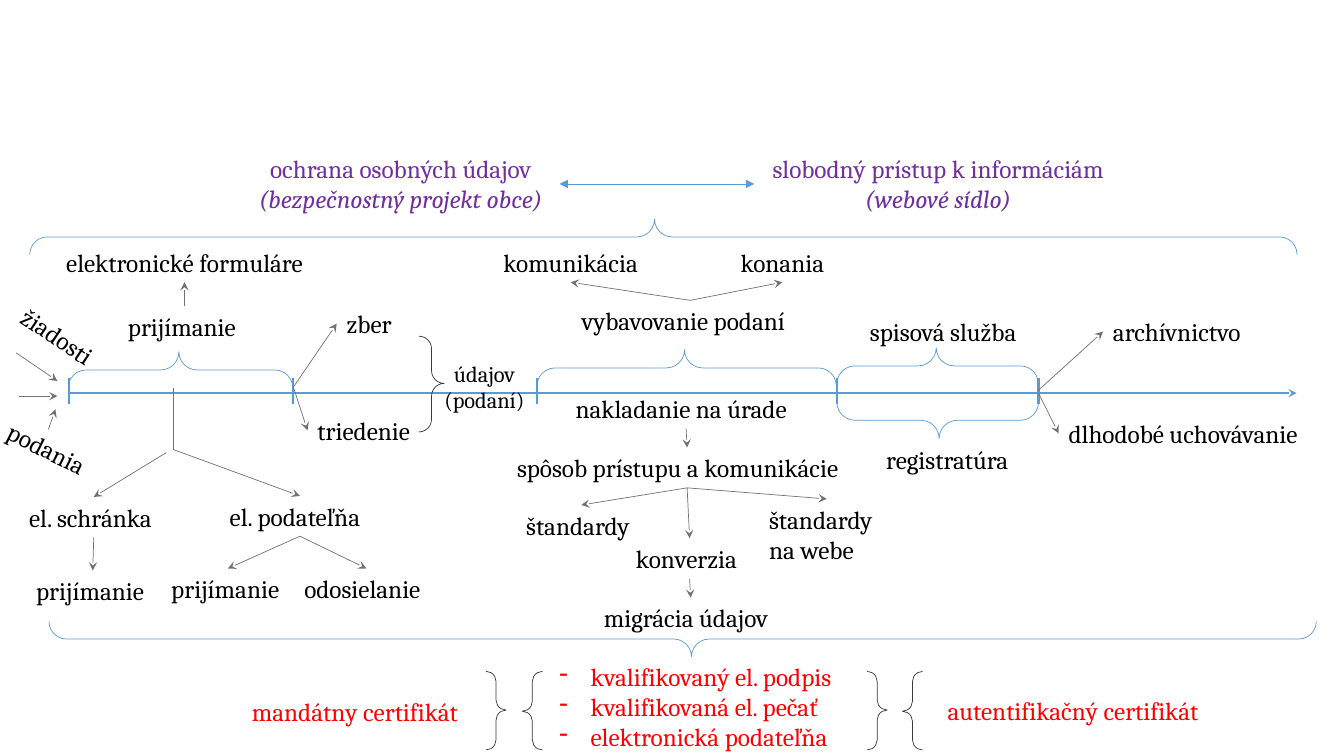
from dataclasses import dataclass
from typing import Optional, Union

from pptx import Presentation
from pptx.dml.color import RGBColor
from pptx.enum.shapes import MSO_CONNECTOR, MSO_SHAPE
from pptx.enum.text import MSO_AUTO_SIZE, PP_ALIGN
from pptx.oxml.ns import qn
from pptx.util import Inches, Pt
from lxml.etree import SubElement


@dataclass(frozen=True)
class Theme:
    font: str = "Cambria"
    body: int = 18
    small: int = 16
    thin: float = 0.5
    thick: float = 1.5
    black: str = "000000"
    red: str = "FF0000"
    purple: str = "7030A0"
    blue: str = "5B9BD5"
    grey: str = "767171"
    dark: str = "3B3838"


THEME = Theme()
TOP, LEFT, BOTTOM, RIGHT = range(4)
POINT_RIGHT, POINT_DOWN, POINT_LEFT, POINT_UP = 0, 90, 180, 270


@dataclass(frozen=True)
class Label:
    key: str
    text: str
    left: float
    top: float
    width: float
    height: float = 0.4
    color: str = THEME.black
    size: int = THEME.body
    center: bool = False
    wrap: bool = False
    turn: float = 0
    slant: bool = False
    bullet: bool = False


@dataclass(frozen=True)
class Brace:
    mid_x: float
    mid_y: float
    depth: float
    span: float
    turn: int
    color: str = THEME.blue


@dataclass(frozen=True)
class Point:
    x: float
    y: float


@dataclass(frozen=True)
class Side:
    key: str
    site: int


@dataclass(frozen=True)
class Line:
    start: Union[Point, Side]
    end: Union[Point, Side]
    color: str = THEME.grey
    width: float = THEME.thin
    head: Optional[str] = None
    tail: Optional[str] = "stealth"


LABELS = [
    Label("tools", "kvalifikovaný el. podpis\nkvalifikovaná el. pečať\nelektronická podateľňa",
          5.45, 6.51, 3.04, 1.01, THEME.red, bullet=True),
    Label("authcert", "autentifikačný certifikát", 9.3, 6.85, 2.78, color=THEME.red),
    Label("mandate", "mandátny certifikát", 2.4, 6.86, 2.33, color=THEME.red),
    Label("privacy", "ochrana osobných údajov\n(bezpečnostný projekt obce)",
          2.4, 1.47, 3.15, 0.71, THEME.purple, center=True, slant=True),
    Label("access", "slobodný prístup k informáciám\n(webové sídlo)",
          7.48, 1.47, 3.65, 0.71, THEME.purple, center=True, slant=True),
    Label("requests", "žiadosti", 0.07, 3.15, 1.05, turn=33.8),
    Label("filings", "podania", -0.05, 4.26, 1.07, turn=26.4),
    Label("intake", "prijímanie", 1.17, 3.04, 1.32),
    Label("mailbox", "el. schránka", 0.19, 4.93, 1.48),
    Label("office", "el. podateľňa", 2.18, 4.92, 1.59),
    Label("forms", "elektronické formuláre", 0.5, 2.4, 2.66, center=True, wrap=True),
    Label("process", "vybavovanie podaní", 5.67, 2.98, 2.35),
    Label("records", "spisová služba", 8.48, 3.09, 1.75, center=True),
    Label("archive", "archívnictvo", 10.94, 3.09, 1.53),
    Label("storage", "dlhodobé uchovávanie", 10.5, 4.1, 2.61),
    Label("registry", "registratúra", 8.65, 4.36, 1.49, center=True),
    Label("handling", "nakladanie na úrade", 5.61, 3.85, 2.39),
    Label("method", "spôsob prístupu a komunikácie", 5.03, 4.44, 3.57),
    Label("standards", "štandardy", 5.12, 5.01, 1.29),
    Label("web", "štandardy\nna webe", 7.53, 4.95, 1.34, 0.71),
    Label("convert", "konverzia", 6.21, 5.34, 1.26),
    Label("migrate", "migrácia údajov", 5.89, 5.93, 1.92),
    Label("collect", "zber", 3.34, 3.01, 0.68),
    Label("sort", "triedenie", 3.05, 4.07, 1.18),
    Label("data", "údajov\n(podaní)", 4.23, 3.52, 1.15, 0.64,
          size=THEME.small, center=True, wrap=True),
    Label("actions", "konania", 7.03, 2.4, 1.46, center=True, wrap=True),
    Label("contact", "komunikácia", 4.74, 2.4, 1.84, center=True, wrap=True),
    Label("boxin", "prijímanie", 0.26, 5.66, 1.32),
    Label("deskin", "prijímanie", 1.6, 5.64, 1.32),
    Label("deskout", "odosielanie", 2.92, 5.64, 1.43),
]

BRACES = [
    Brace(6.77, 6.34, 0.35, 12.57, POINT_DOWN),
    Brace(6.58, 2.35, 0.35, 12.57, POINT_UP),
    Brace(1.79, 3.67, 0.36, 2.23, POINT_UP),
    Brace(6.81, 3.65, 0.36, 2.97, POINT_UP),
    Brace(9.3, 3.63, 0.36, 2, POINT_UP),
    Brace(9.3, 4.17, 0.36, 2, POINT_DOWN),
    Brace(4.28, 3.81, 0.25, 0.95, POINT_RIGHT, THEME.dark),
] + [
    Brace(x, 7.05, 0.2, 0.78, turn, THEME.dark)
    for x, turn in ((4.92, POINT_RIGHT), (5.28, POINT_LEFT),
                    (8.7, POINT_RIGHT), (9.05, POINT_LEFT))
]

AXIS = Line(Point(0.67, 3.9), Point(12.86, 3.9), THEME.blue, THEME.thick)
TICKS = [
    Line(Point(x, 3.75), Point(x, 4.01), THEME.blue, THEME.thick, tail=None)
    for x in (0.68, 2.91, 5.33, 8.3, 10.3)
]
TREE = [
    ("intake", "forms", TOP, BOTTOM),
    ("process", "actions", TOP, BOTTOM),
    ("process", "contact", TOP, BOTTOM),
    ("handling", "method", BOTTOM, TOP),
    ("method", "standards", BOTTOM, TOP),
    ("method", "convert", BOTTOM, TOP),
    ("method", "web", BOTTOM, TOP),
    ("convert", "migrate", BOTTOM, TOP),
    ("mailbox", "boxin", BOTTOM, TOP),
    ("office", "deskin", BOTTOM, TOP),
    ("office", "deskout", BOTTOM, TOP),
]
ARROWS = [Line(Side(a, out), Side(b, into)) for a, b, out, into in TREE] + [
    Line(Side("privacy", RIGHT), Side("access", LEFT), THEME.blue,
         head="triangle", tail="triangle"),
    Line(Point(0.16, 3.5), Point(0.57, 3.78)),
    Line(Point(0.48, 4.26), Point(0.55, 4.06)),
    Line(Point(0.19, 3.93), Point(0.57, 3.93)),
    Line(Point(2.91, 3.84), Side("collect", LEFT)),
    Line(Point(2.91, 3.84), Side("sort", LEFT)),
    Line(Point(1.72, 3.85), Point(1.72, 4.46), tail=None),
    Line(Point(1.72, 4.46), Side("office", TOP)),
    Line(Point(1.65, 4.49), Side("mailbox", TOP)),
    Line(Point(10.29, 3.88), Side("archive", LEFT)),
    Line(Point(10.3, 3.9), Side("storage", LEFT)),
]


def add_label(slide, label: Label):
    box = slide.shapes.add_textbox(Inches(label.left), Inches(label.top),
                                   Inches(label.width), Inches(label.height))
    box.rotation = label.turn
    frame = box.text_frame
    frame.text = label.text
    frame.word_wrap = label.wrap
    frame.auto_size = MSO_AUTO_SIZE.SHAPE_TO_FIT_TEXT
    for row, para in enumerate(frame.paragraphs):
        if label.center:
            para.alignment = PP_ALIGN.CENTER
        if label.bullet:
            props = para._p.get_or_add_pPr()
            props.set("marL", str(Inches(0.31)))
            props.set("indent", str(Inches(-0.31)))
            SubElement(props, qn("a:buChar")).set("char", "-")
        for run in para.runs:
            font = run.font
            font.name = THEME.font
            font.size = Pt(label.size)
            font.color.rgb = RGBColor.from_string(label.color)
            if label.slant and row > 0:
                font.italic = True
    return box


def add_brace(slide, brace: Brace) -> None:
    shape = slide.shapes.add_shape(
        MSO_SHAPE.RIGHT_BRACE,
        Inches(brace.mid_x - brace.depth / 2), Inches(brace.mid_y - brace.span / 2),
        Inches(brace.depth), Inches(brace.span))
    shape.rotation = brace.turn
    shape.adjustments[0] = 0.5
    shape.adjustments[1] = 0.493
    shape.shadow.inherit = False
    shape.fill.background()
    shape.line.color.rgb = RGBColor.from_string(brace.color)
    shape.line.width = Pt(THEME.thin)


def add_line(slide, line: Line, boxes: dict) -> None:
    spots = [Inches(value) for end in (line.start, line.end)
             for value in ((end.x, end.y) if isinstance(end, Point) else (0, 0))]
    link = slide.shapes.add_connector(MSO_CONNECTOR.STRAIGHT, *spots)
    if isinstance(line.start, Side):
        link.begin_connect(boxes[line.start.key], line.start.site)
    if isinstance(line.end, Side):
        link.end_connect(boxes[line.end.key], line.end.site)
    link.line.color.rgb = RGBColor.from_string(line.color)
    link.line.width = Pt(line.width)
    props = link.element.spPr
    for tag, kind in (("a:headEnd", line.head), ("a:tailEnd", line.tail)):
        if kind:
            SubElement(props.find(qn("a:ln")), qn(tag)).set("type", kind)
    SubElement(props, qn("a:effectLst"))


def main() -> None:
    deck = Presentation()
    deck.slide_width, deck.slide_height = Inches(13.33), Inches(7.5)
    slide = deck.slides.add_slide(deck.slide_layouts[6])
    add_line(slide, AXIS, {})
    boxes = {label.key: add_label(slide, label) for label in LABELS}
    for brace in BRACES:
        add_brace(slide, brace)
    for line in TICKS + ARROWS:
        add_line(slide, line, boxes)
    deck.save("out.pptx")


if __name__ == "__main__":
    main()
